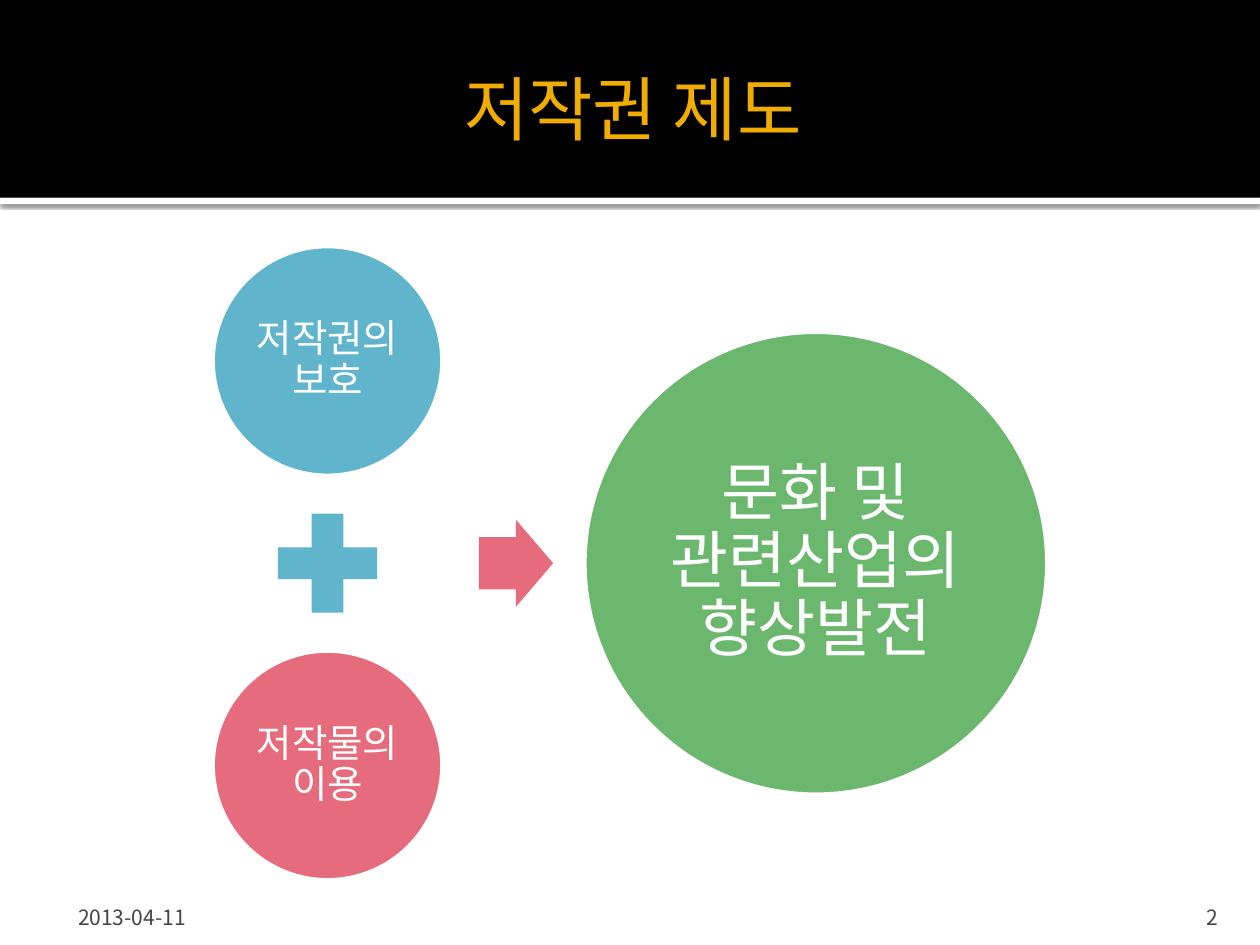
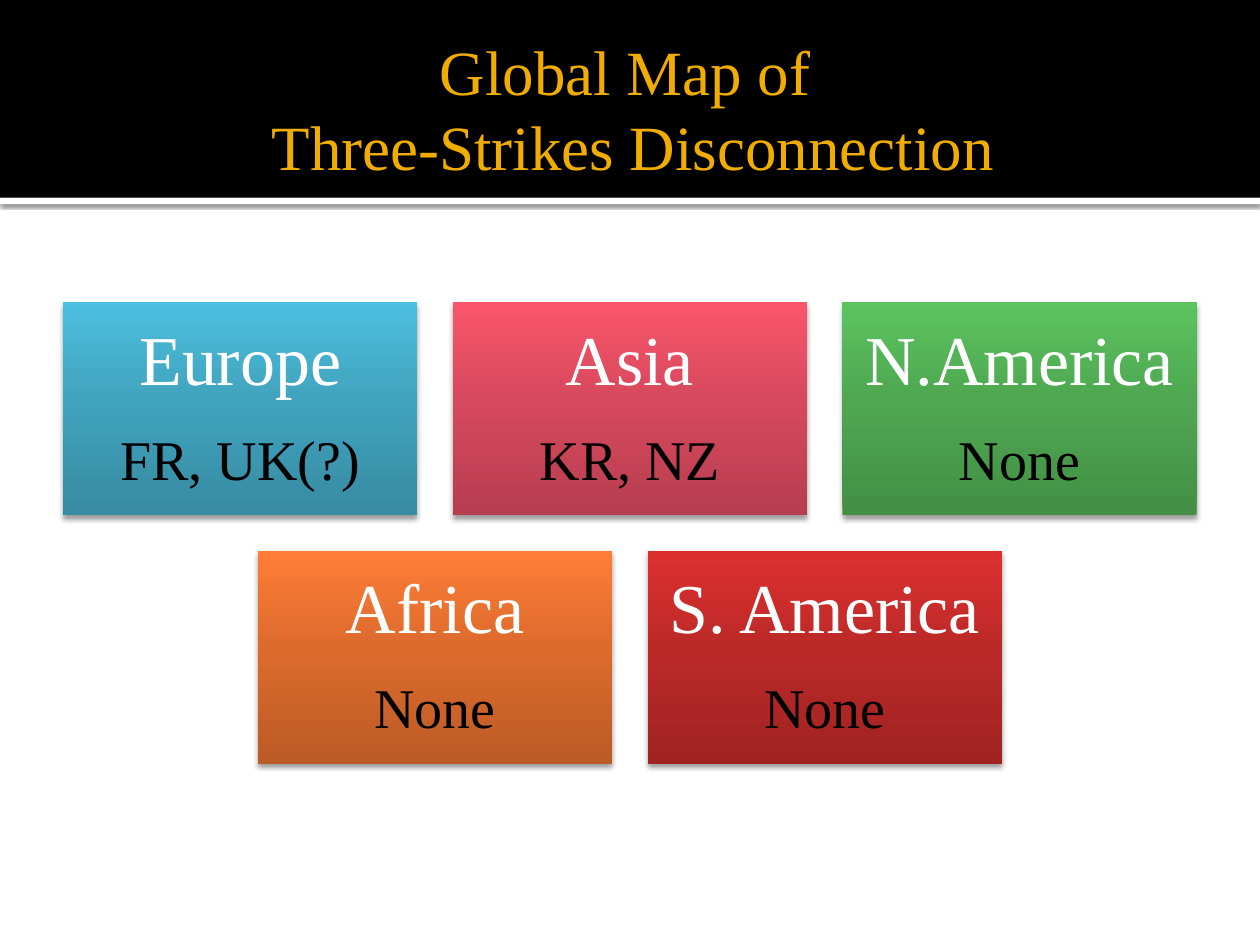
from dataclasses import dataclass

from lxml import etree
from pptx import Presentation
from pptx import util as u
from pptx.dml.color import RGBColor
from pptx.enum import shapes, text
from pptx.oxml import parse_xml
from pptx.oxml.ns import nsdecls, qn

COLUMNS, ROWS = 40, 30
CELL = u.Inches(0.25)  # side of one square grid cell


@dataclass(frozen=True)
class Theme:
    black: str = "000000"
    white: str = "FFFFFF"
    gold: str = "F0AD00"
    gray: str = "454545"
    blue: str = "60B5CC"
    pink: str = "E66C7D"
    green: str = "6BB76D"
    latin: str = "Times New Roman"
    korean: str = "Noto Sans CJK KR"
    title: int = 40
    long_title: int = 36
    goal: int = 36
    aim: int = 22
    region: int = 40
    countries: int = 32
    footer: int = 12


THEME = Theme()
SHAPE = shapes.MSO_SHAPE
ALIGN = text.PP_ALIGN
ANCHOR = text.MSO_ANCHOR

# Region, countries, gradient from bottom to top
REGION_ROWS = [
    [("Europe", "FR, UK(?)", ("378BA2", "41A4BF", "4BBFDE")),
     ("Asia", "KR, NZ", ("B73E4F", "D7495D", "FA556C")),
     ("N.America", "None", ("438F45", "4FA851", "5CC35F"))],
    [("Africa", "None", ("BC5B26", "DD6B2D", "FF7D37")),
     ("S. America", "None", ("A02322", "BC2A28", "DC302F"))],
]


def cells(*counts):
    return [round(count * CELL) for count in counts]


def set_frame(shape, anchor, insets):
    """Set the anchor and the left, top, right and bottom insets in grid cells."""
    frame = shape.text_frame
    frame.word_wrap = True
    frame.vertical_anchor = anchor
    (frame.margin_left, frame.margin_top,
     frame.margin_right, frame.margin_bottom) = cells(*insets)


def write(paragraph, words, size, color, font=THEME.latin, align=ALIGN.CENTER,
          line_spacing=None, space_after=None):
    paragraph.text = words
    paragraph.alignment = align
    paragraph.line_spacing = line_spacing
    if space_after is not None:
        paragraph.space_after = u.Pt(space_after)
    for run in paragraph.runs:
        run.font.size = u.Pt(size)
        run.font.color.rgb = RGBColor.from_string(color)
        run.font.name = font
        etree.SubElement(run.font._element, qn("a:ea"), typeface=THEME.korean)


def add_text(slide, box, words, anchor, insets, **text_format):
    shape = slide.shapes.add_textbox(*cells(*box))
    set_frame(shape, anchor, insets)
    write(shape.text_frame.paragraphs[0], words, **text_format)


def add_figure(slide, kind, box, color, outline=None):
    shape = slide.shapes.add_shape(kind, *cells(*box))
    shape.shadow.inherit = False
    shape.fill.solid()
    shape.fill.fore_color.rgb = RGBColor.from_string(color)
    if outline:
        shape.line.color.rgb = RGBColor.from_string(THEME.white)
        shape.line.width = u.Pt(outline)
    else:
        shape.line.fill.background()
    return shape


def add_shadow(shape, opacity, blur, distance):
    """Cast a black shadow straight down; opacity in percent, lengths in points."""
    effects = shape._element.spPr.find(qn("a:effectLst"))
    effects.append(parse_xml(
        f'<a:outerShdw {nsdecls("a")} blurRad="{u.Pt(blur)}" dist="{u.Pt(distance)}"'
        f' dir="5400000" algn="ctr" rotWithShape="0"><a:srgbClr val="{THEME.black}">'
        f'<a:alpha val="{opacity * 1000}"/></a:srgbClr></a:outerShdw>'))


def fill_upward(shape, colors):
    shape.fill.gradient()
    shape.fill.gradient_angle = 90
    stops = shape._element.spPr.find(".//" + qn("a:gsLst"))
    for stop in list(stops):
        stops.remove(stop)
    for position, color in zip((0, 55, 100), colors):
        stops.append(parse_xml(
            f'<a:gs {nsdecls("a")} pos="{position * 1000}"><a:srgbClr val="{color}"/></a:gs>'))


def centered(x, y, width, height):
    return x - width / 2, y - height / 2, width, height


def add_titled_slide(presentation, title, size):
    slide = presentation.slides.add_slide(presentation.slide_layouts[6])
    band_height = 6.28
    strip = add_figure(slide, SHAPE.RECTANGLE, (0, band_height, COLUMNS, 0.2), THEME.white)
    add_shadow(strip, opacity=60, blur=2.5, distance=0.8)
    add_figure(slide, SHAPE.RECTANGLE, (0, 0, COLUMNS, band_height), THEME.black)
    add_text(slide, (2, 0.68, COLUMNS - 4, 5.48), title, ANCHOR.MIDDLE,
             (0.4, 0.2, 0.2, 0.2), size=size, color=THEME.gold)
    return slide


def add_footer(slide, date, number):
    top, height = 28.32, 1.2
    style = dict(size=THEME.footer, color=THEME.gray, font=THEME.korean)
    add_text(slide, (2, top, 9.32, height), date, ANCHOR.BOTTOM,
             (0.48, 0.2, 0.2, 0), align=ALIGN.LEFT, **style)
    add_text(slide, (35.88, top, 3.2, height), number, ANCHOR.BOTTOM,
             (0.4, 0.2, 0.4, 0), align=ALIGN.RIGHT, **style)


def add_circle(slide, x, y, diameter, color, words, size, inset):
    circle = add_figure(slide, SHAPE.OVAL, centered(x, y, diameter, diameter),
                        color, outline=3.78)
    set_frame(circle, ANCHOR.MIDDLE, [inset] * 4)
    write(circle.text_frame.paragraphs[0], words, size, THEME.white,
          font=THEME.korean, line_spacing=0.9)


def add_copyright_equation(slide):
    """Two aims joined by a plus lead to one goal, all about one axis."""
    aims_x, axis, spread = 10.4, 17.88, 6.42
    aims = [("저작권의 보호", THEME.blue, -spread), ("저작물의 이용", THEME.pink, spread)]
    for words, color, offset in aims:
        add_circle(slide, aims_x, axis + offset, 7.36, color, words, THEME.aim, 0.12)
    add_figure(slide, SHAPE.MATH_PLUS, centered(aims_x, axis, 4.28, 4.28), THEME.blue)
    arrow = add_figure(slide, SHAPE.RIGHT_ARROW, centered(16.38, axis, 2.36, 2.76), THEME.pink)
    arrow.adjustments[0] = 0.6
    add_circle(slide, 25.9, axis, 14.76, THEME.green,
               "문화 및 관련산업의 향상발전", THEME.goal, 0.2)


def add_region_card(slide, box, region, countries, colors):
    card = add_figure(slide, SHAPE.RECTANGLE, box, colors[1])
    fill_upward(card, colors)
    add_shadow(card, opacity=38, blur=3.1, distance=2)
    set_frame(card, ANCHOR.MIDDLE, [0.68] * 4)
    frame = card.text_frame
    spacing = dict(line_spacing=0.9, space_after=18)
    write(frame.paragraphs[0], region, THEME.region, THEME.white, **spacing)
    write(frame.add_paragraph(), countries, THEME.countries, THEME.black, **spacing)


def add_region_grid(slide):
    """Rows of equal cards, each row centred on the slide."""
    width, height, gap, top = 11.25, 6.76, 1.12, 9.6
    for row, regions in enumerate(REGION_ROWS):
        row_width = len(regions) * (width + gap) - gap
        left = (COLUMNS - row_width) / 2
        for column, region in enumerate(regions):
            box = (left + column * (width + gap), top + row * (height + gap), width, height)
            add_region_card(slide, box, *region)


def main():
    presentation = Presentation()
    presentation.slide_width, presentation.slide_height = cells(COLUMNS, ROWS)

    copyright_slide = add_titled_slide(presentation, "저작권 제도", THEME.title)
    add_copyright_equation(copyright_slide)
    add_footer(copyright_slide, "2013-04-11", "2")

    map_slide = add_titled_slide(
        presentation, "Global Map of \vThree-Strikes Disconnection", THEME.long_title)
    add_region_grid(map_slide)

    presentation.save("out.pptx")


if __name__ == "__main__":
    main()
